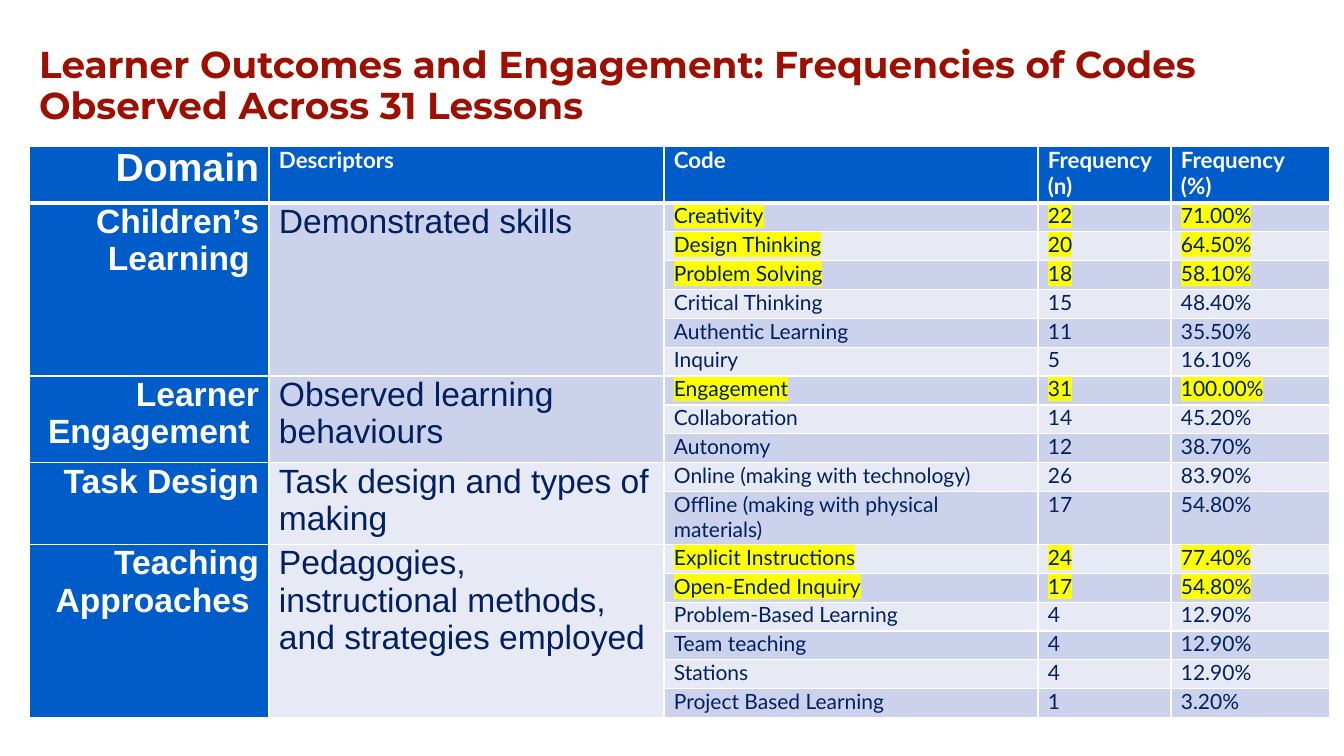
import lxml.etree
import pptx
import pptx.dml.color
import pptx.enum.text
import pptx.oxml.ns
import pptx.util

EMU_PER_PX = 914400 / 100.8
BLUE, NAVY, WHITE, RED, YELLOW = "005CC9", "002060", "FFFFFF", "9D0F00", "FFFF00"
BANDS = ["E7EAF5", "CCD2EB"]
TITLE = "Learner Outcomes and Engagement: Frequencies of Codes Observed Across 31 Lessons"
HEADERS = ["Domain", "Descriptors", "Code", "Frequency (n)", "Frequency (%)"]
COLUMN_WIDTHS = [240, 395, 374, 133, 159]
HEADER_HEIGHT, TWO_LINE_HEIGHT = 57, 53
TWO_LINE_CODE = "Offline (making with physical materials)"
DOMAINS = [
    ("Children’s Learning ", "Demonstrated skills", [
        ("Creativity", "22", "71.00%"),
        ("Design Thinking", "20", "64.50%"),
        ("Problem Solving", "18", "58.10%"),
        ("Critical Thinking", "15", "48.40%"),
        ("Authentic Learning", "11", "35.50%"),
        ("Inquiry", "5", "16.10%"),
    ]),
    ("Learner Engagement ", "Observed learning behaviours", [
        ("Engagement", "31", "100.00%"),
        ("Collaboration", "14", "45.20%"),
        ("Autonomy", "12", "38.70%"),
    ]),
    ("Task Design", "Task design and types of making", [
        ("Online (making with technology)", "26", "83.90%"),
        (TWO_LINE_CODE, "17", "54.80%"),
    ]),
    ("Teaching Approaches ", "Pedagogies, instructional methods, and strategies employed", [
        ("Explicit Instructions", "24", "77.40%"),
        ("Open-Ended Inquiry", "17", "54.80%"),
        ("Problem-Based Learning", "4", "12.90%"),
        ("Team teaching", "4", "12.90%"),
        ("Stations", "4", "12.90%"),
        ("Project Based Learning", "1", "3.20%"),
    ]),
]
HIGHLIGHTED = {"Creativity", "Design Thinking", "Problem Solving", "Engagement",
               "Explicit Instructions", "Open-Ended Inquiry"}


def px(length):
    """Turn pixels into EMU."""
    return pptx.util.Emu(round(length * EMU_PER_PX))


def color(value):
    """Turn a hex string into a colour."""
    return pptx.dml.color.RGBColor.from_string(value)


def add_run(paragraph, text, size, font, hex_color, bold=False, highlight=None):
    """Add one formatted run to a paragraph."""
    run = paragraph.add_run()
    run.text = text
    run.font.size = pptx.util.Pt(size)
    run.font.name = font
    run.font.bold = bold
    run.font.color.rgb = color(hex_color)
    if highlight:
        mark = lxml.etree.Element(pptx.oxml.ns.qn("a:highlight"))
        lxml.etree.SubElement(mark, pptx.oxml.ns.qn("a:srgbClr"), val=highlight)
        run.font._element.find(pptx.oxml.ns.qn("a:solidFill")).addnext(mark)


def set_borders(cell, top, bottom):
    """Give a cell white borders, with the top and bottom widths in points."""
    properties = cell._tc.get_or_add_tcPr()
    for index, (side, width) in enumerate([("L", 1), ("R", 1), ("T", top), ("B", bottom)]):
        line = lxml.etree.Element(pptx.oxml.ns.qn("a:ln" + side), w=str(pptx.util.Pt(width)))
        fill = lxml.etree.SubElement(line, pptx.oxml.ns.qn("a:solidFill"))
        lxml.etree.SubElement(fill, pptx.oxml.ns.qn("a:srgbClr"), val=WHITE)
        properties.insert(index, line)


def write_cell(cell, text, size, font, hex_color, bold=False, right=False, highlight=None):
    """Write one line of text into a cell."""
    paragraph = cell.text_frame.paragraphs[0]
    if right:
        paragraph.alignment = pptx.enum.text.PP_ALIGN.RIGHT
    add_run(paragraph, text, size, font, hex_color, bold, highlight)


def style_cells(table):
    """Set the fill, margins and borders of every cell."""
    for row_index, row in enumerate(table.rows):
        for column_index, cell in enumerate(row.cells):
            cell.margin_left = cell.margin_right = px(10)
            cell.margin_top = cell.margin_bottom = 0
            is_blue = row_index == 0 or column_index == 0
            cell.fill.solid()
            cell.fill.fore_color.rgb = color(BLUE if is_blue else BANDS[row_index % 2])
            set_borders(cell, 3 if row_index == 1 else 1, 3 if row_index == 0 else 1)


def add_title(slide, left, top, width, height):
    """Place and format the title in its box."""
    title = slide.shapes.title
    title.left, title.top, title.width, title.height = map(px, (left, top, width, height))
    frame = title.text_frame
    frame.word_wrap = True
    frame.auto_size = pptx.enum.text.MSO_AUTO_SIZE.NONE
    frame.vertical_anchor = pptx.enum.text.MSO_ANCHOR.MIDDLE
    paragraph = frame.paragraphs[0]
    paragraph.alignment = pptx.enum.text.PP_ALIGN.LEFT
    paragraph.line_spacing = 0.9
    add_run(paragraph, TITLE, 26.7, "Montserrat", RED, True)


def add_frequency_table(slide, left, top, width, height):
    """Place the table of code frequencies in its box."""
    code_count = sum(len(codes) for _, _, codes in DOMAINS)
    table = slide.shapes.add_table(code_count + 1, len(HEADERS),
                                   px(left), px(top), px(width), px(height)).table
    for column, column_width in zip(table.columns, COLUMN_WIDTHS):
        column.width = px(column_width)
    code_height = (height - HEADER_HEIGHT - TWO_LINE_HEIGHT) / (code_count - 1)
    table.rows[0].height = px(HEADER_HEIGHT)
    style_cells(table)

    write_cell(table.cell(0, 0), HEADERS[0], 28, "Arial", WHITE, True, True)
    for column_index, header in enumerate(HEADERS[1:], 1):
        write_cell(table.cell(0, column_index), header, 16, "Lato", WHITE, True)

    row_index = 1
    for domain, descriptor, codes in DOMAINS:
        last_row = row_index + len(codes) - 1
        for column_index in (0, 1):
            table.cell(row_index, column_index).merge(table.cell(last_row, column_index))
        write_cell(table.cell(row_index, 0), domain, 24, "Arial", WHITE, True, True)
        write_cell(table.cell(row_index, 1), descriptor, 24, "Arial", NAVY)
        for values in codes:
            code = values[0]
            table.rows[row_index].height = px(
                TWO_LINE_HEIGHT if code == TWO_LINE_CODE else code_height)
            highlight = YELLOW if code in HIGHLIGHTED else None
            for column_index, value in enumerate(values, 2):
                write_cell(table.cell(row_index, column_index), value, 15, "Lato", NAVY,
                           highlight=highlight)
            row_index += 1


def main():
    """Build and save the presentation."""
    presentation = pptx.Presentation()
    presentation.slide_width, presentation.slide_height = px(1344), px(756)
    slide = presentation.slides.add_slide(presentation.slide_layouts[5])
    add_title(slide, 29, 14, 1301, 146)
    add_frequency_table(slide, 29, 146, sum(COLUMN_WIDTHS), 572)
    presentation.save("out.pptx")


if __name__ == "__main__":
    main()
